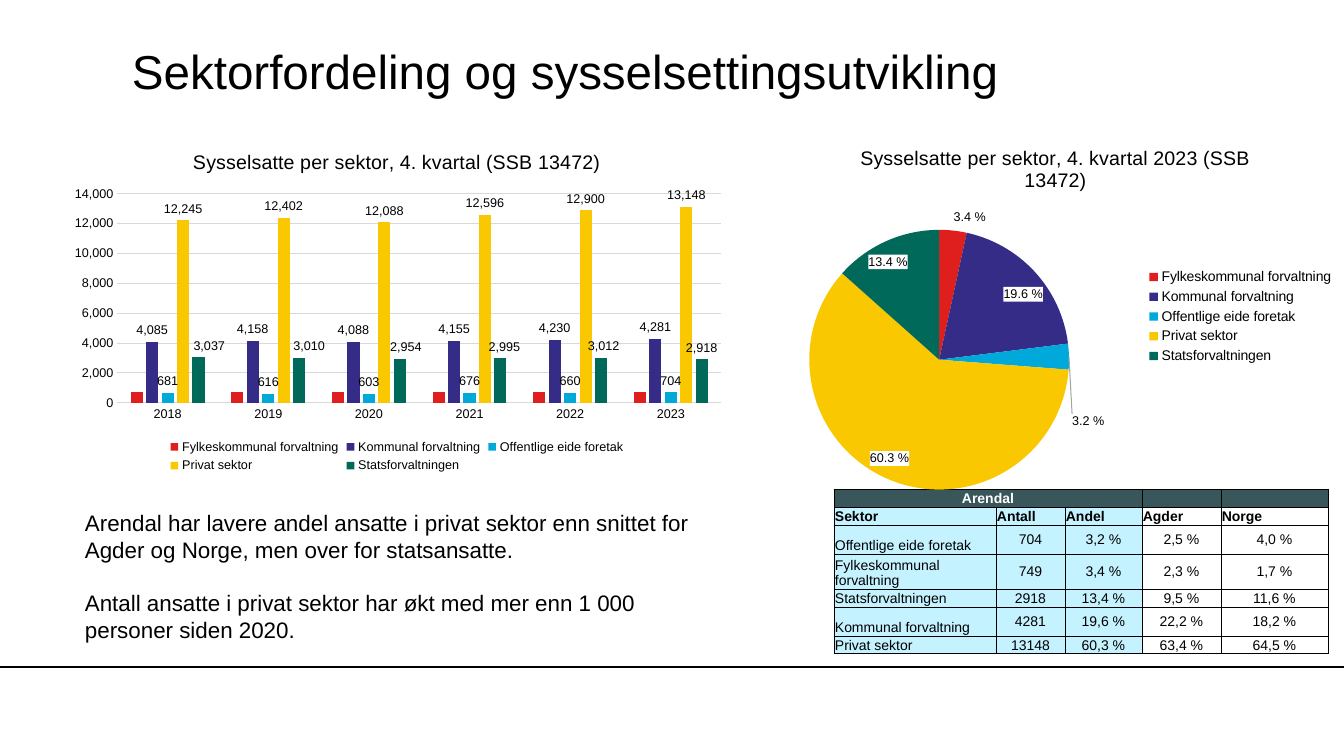
from pptx import Presentation
from pptx.chart.data import CategoryChartData
from pptx.dml.color import RGBColor
from pptx.enum.chart import XL_CHART_TYPE, XL_LEGEND_POSITION, XL_TICK_MARK
from pptx.enum.shapes import MSO_CONNECTOR
from pptx.enum.text import MSO_ANCHOR, PP_ALIGN
from pptx.oxml import parse_xml
from pptx.oxml.ns import nsdecls
from pptx.util import Pt

COLUMN, PIE = XL_CHART_TYPE.COLUMN_CLUSTERED, XL_CHART_TYPE.PIE
LEGEND_BOTTOM, LEGEND_RIGHT = XL_LEGEND_POSITION.BOTTOM, XL_LEGEND_POSITION.RIGHT
NO_TICK = XL_TICK_MARK.NONE
STRAIGHT = MSO_CONNECTOR.STRAIGHT
TOP, MIDDLE, BOTTOM = MSO_ANCHOR.TOP, MSO_ANCHOR.MIDDLE, MSO_ANCHOR.BOTTOM
LEFT, CENTER = PP_ALIGN.LEFT, PP_ALIGN.CENTER

BLACK = RGBColor(0, 0, 0)
WHITE = RGBColor(255, 255, 255)
GRID = RGBColor(0xD9, 0xD9, 0xD9)
LEADER = RGBColor(0xA6, 0xA6, 0xA6)
HEADER = RGBColor(0x39, 0x57, 0x5B)
PALE = RGBColor(0xC5, 0xF2, 0xFF)
RED = RGBColor(0xDF, 0x1F, 0x1D)
PURPLE = RGBColor(0x34, 0x2C, 0x86)
BLUE = RGBColor(0x00, 0xA9, 0xDA)
YELLOW = RGBColor(0xFA, 0xC8, 0x00)
GREEN = RGBColor(0x00, 0x69, 0x5A)
FONT = "Arial"

TITLE = "Sektorfordeling og sysselsettingsutvikling"
COMMENTS = [
    "Arendal har lavere andel ansatte i privat sektor enn snittet for Agder og Norge, "
    "men over for statsansatte.",
    "Antall ansatte i privat sektor har økt med mer enn 1 000 personer siden 2020.",
]
YEARS = ["2018", "2019", "2020", "2021", "2022", "2023"]
# name, colour, share in 2023, employed per year
SECTORS = [
    ("Fylkeskommunal forvaltning", RED, 3.4, [700] * 6),
    ("Kommunal forvaltning", PURPLE, 19.6, [4085, 4158, 4088, 4155, 4230, 4281]),
    ("Offentlige eide foretak", BLUE, 3.2, [681, 616, 603, 676, 660, 704]),
    ("Privat sektor", YELLOW, 60.3, [12245, 12402, 12088, 12596, 12900, 13148]),
    ("Statsforvaltningen", GREEN, 13.4, [3037, 3010, 2954, 2995, 3012, 2918]),
]
TABLE = [
    ["Arendal", "", "", "", ""],
    ["Sektor", "Antall", "Andel", "Agder", "Norge"],
    ["Offentlige eide foretak", "704", "3,2 %", "2,5 %", "4,0 %"],
    ["Fylkeskommunal forvaltning", "749", "3,4 %", "2,3 %", "1,7 %"],
    ["Statsforvaltningen", "2918", "13,4 %", "9,5 %", "11,6 %"],
    ["Kommunal forvaltning", "4281", "19,6 %", "22,2 %", "18,2 %"],
    ["Privat sektor", "13148", "60,3 %", "63,4 %", "64,5 %"],
]
COLUMN_WIDTHS = [162, 69, 77, 79, 107]
ROW_HEIGHTS = [18, 18, 29, 35, 18, 29, 18]
ARENDAL_COLUMNS = 3

COLUMN_CHART = (60, 134, 674, 343)
COLUMN_PLOT = (117, 194, 604, 209)
PIE_CHART = (767, 129, 577, 375)
PIE_PLOT = (809, 230, 260, 260)
# point: x shift, y shift, position, fill
STATE_LABELS = {point: (shift, 0, "outEnd", "") for point, shift in enumerate([11, 10, 6, 4, 3])}
PIE_LABELS = {
    0: (0, 0, "outEnd", ""),
    1: (12, 11, "inEnd", WHITE),
    2: (-3, 65, "outEnd", ""),
    3: (-21, -8, "inEnd", WHITE),
    4: (-20, 8, "inEnd", WHITE),
}


def px(length):
    return round(length * 914400 / 100.8)


def px_all(*lengths):
    return [px(length) for length in lengths]


def style_font(font, size, color=BLACK, bold=False):
    for name, value in {"name": FONT, "size": Pt(size), "bold": bold}.items():
        setattr(font, name, value)
    font.color.rgb = color


def add_text(slide, area, texts, size, margins, anchor, gap=0):
    frame = slide.shapes.add_textbox(*px_all(*area)).text_frame
    frame.word_wrap = True
    frame.vertical_anchor = anchor
    for side, margin in zip(("left", "top", "right", "bottom"), margins):
        setattr(frame, "margin_" + side, px(margin))
    for index, text in enumerate(texts):
        para = frame.paragraphs[0] if index == 0 else frame.add_paragraph()
        para.text = text
        if index:
            para.space_before = Pt(gap)
        style_font(para.font, size)


def manual_layout(**parts):
    modes = '<c:xMode val="edge"/><c:yMode val="edge"/>' if "w" in parts else ""
    values = "".join(f'<c:{name} val="{value:.3f}"/>' for name, value in parts.items())
    target = '<c:layoutTarget val="inner"/>' if "w" in parts else ""
    return f"<c:layout {nsdecls('c')}><c:manualLayout>{target}{modes}{values}</c:manualLayout></c:layout>"


def label_settings(number_format, position, fill):
    paint = f'<a:solidFill><a:srgbClr val="{fill}"/></a:solidFill>' if fill else "<a:noFill/>"
    flags = "".join(f'<c:{flag} val="{int(flag == "showVal")}"/>' for flag in (
        "showLegendKey", "showVal", "showCatName", "showSerName", "showPercent", "showBubbleSize"))
    return (f'<c:numFmt formatCode="{number_format}" sourceLinked="0"/><c:spPr>{paint}</c:spPr>'
            '<c:txPr><a:bodyPr/><a:p><a:pPr><a:defRPr sz="900" b="0"><a:solidFill>'
            f'<a:srgbClr val="{BLACK}"/></a:solidFill><a:latin typeface="{FONT}"/></a:defRPr></a:pPr>'
            f'<a:endParaRPr lang="nb-NO"/></a:p></c:txPr><c:dLblPos val="{position}"/>{flags}')


def add_labels(series, number_format, area, points, leader=""):
    """Show values; points maps an index to (x shift, y shift, position, fill)."""
    singles = "".join(
        f'<c:dLbl><c:idx val="{index}"/>{manual_layout(x=x / area[2], y=y / area[3])}'
        f'{label_settings(number_format, position, fill)}</c:dLbl>'
        for index, (x, y, position, fill) in points.items())
    shared = label_settings(number_format, "outEnd", "")
    element = series.data_labels._element
    element.getparent().replace(element, parse_xml(
        f"<c:dLbls {nsdecls('c', 'a')}>{singles}{shared}{leader}</c:dLbls>"))


def add_sector_chart(slide, kind, area, plot_area, title, categories, series, legend, legend_size):
    data = CategoryChartData(number_format="General")
    data.categories = categories
    for name, values in series:
        data.add_series(name, values)
    chart = slide.shapes.add_chart(kind, *px_all(*area), data).chart
    style_font(chart.font, 10)
    chart.has_title = True
    chart.chart_title.include_in_layout = False
    para = chart.chart_title.text_frame.paragraphs[0]
    para.text = title
    style_font(para.runs[0].font, 14)
    chart.has_legend = True
    chart.legend.position = legend
    chart.legend.include_in_layout = False
    style_font(chart.legend.font, legend_size)
    left, top, width, height = area
    x, y, plot_width, plot_height = plot_area
    layout = parse_xml(manual_layout(x=(x - left) / width, y=(y - top) / height,
                                     w=plot_width / width, h=plot_height / height))
    plot_element = chart.plots[0]._element.getparent()
    for old in plot_element.findall(layout.tag):
        plot_element.remove(old)
    plot_element.insert(0, layout)
    return chart


def add_column_chart(slide):
    chart = add_sector_chart(slide, COLUMN, COLUMN_CHART, COLUMN_PLOT,
                             "Sysselsatte per sektor, 4. kvartal (SSB 13472)", YEARS,
                             [(name, values) for name, _, _, values in SECTORS], LEGEND_BOTTOM, 9)
    plot = chart.plots[0]
    plot.gap_width, plot.overlap, plot.vary_by_categories = 219, -27, False
    for series, (_, color, _, _) in zip(plot.series, SECTORS):
        series.format.fill.solid()
        series.format.fill.fore_color.rgb = color
        if color != RED:
            add_labels(series, "#,##0", COLUMN_CHART, STATE_LABELS if color == GREEN else {})
    for axis in (chart.category_axis, chart.value_axis):
        axis.major_tick_mark = axis.minor_tick_mark = NO_TICK
        style_font(axis.tick_labels.font, 9)
    values = chart.value_axis
    values.minimum_scale, values.maximum_scale, values.major_unit = 0, 14000, 2000
    values.tick_labels.number_format = "#,##0"
    values.tick_labels.number_format_is_linked = False
    values.format.line.fill.background()
    for line in (values.major_gridlines.format.line, chart.category_axis.format.line):
        line.color.rgb, line.width = GRID, Pt(0.75)


def add_pie_chart(slide):
    chart = add_sector_chart(slide, PIE, PIE_CHART, PIE_PLOT,
                             "Sysselsatte per sektor, 4. kvartal 2023 (SSB 13472)",
                             [sector[0] for sector in SECTORS],
                             [("Series 1", [sector[2] for sector in SECTORS])], LEGEND_RIGHT, 10)
    series = chart.plots[0].series[0]
    for index, (_, color, _, _) in enumerate(SECTORS):
        fill = series.points[index].format.fill
        fill.solid()
        fill.fore_color.rgb = color
    leader = ('<c:showLeaderLines val="1"/><c:leaderLines><c:spPr><a:ln w="9525"><a:solidFill>'
              f'<a:srgbClr val="{LEADER}"/></a:solidFill></a:ln></c:spPr></c:leaderLines>')
    add_labels(series, "0.0&quot; %&quot;", PIE_CHART, PIE_LABELS, leader)


def add_sector_table(slide):
    table = slide.shapes.add_table(len(ROW_HEIGHTS), len(COLUMN_WIDTHS), *px_all(
        834, 489, sum(COLUMN_WIDTHS), sum(ROW_HEIGHTS))).table
    for column, width in zip(table.columns, COLUMN_WIDTHS):
        column.width = px(width)
    for row, height in zip(table.rows, ROW_HEIGHTS):
        row.height = px(height)
    for row, texts in enumerate(TABLE):
        for column, text in enumerate(texts):
            cell = table.cell(row, column)
            number = row > 1 and column > 0
            formats = {"margin_left": px(1), "margin_right": px(1), "margin_top": px(1),
                       "margin_bottom": 0, "vertical_anchor": MIDDLE if number else BOTTOM}
            for name, value in formats.items():
                setattr(cell, name, value)
            para = cell.text_frame.paragraphs[0]
            para.text = text
            para.alignment = CENTER if number or row == 0 else LEFT
            style_font(para.font, 10, BLACK if row else WHITE, row < 2)
            properties = cell._tc.get_or_add_tcPr()
            for side in ("lnL", "lnR", "lnT", "lnB"):
                properties.append(parse_xml(
                    f'<a:{side} {nsdecls("a")} w="6350"><a:solidFill><a:srgbClr val="{BLACK}"/>'
                    f'</a:solidFill></a:{side}>'))
            if row and column >= ARENDAL_COLUMNS:
                cell.fill.background()
            else:
                cell.fill.solid()
                cell.fill.fore_color.rgb = PALE if row else HEADER
    table.cell(0, 0).merge(table.cell(0, ARENDAL_COLUMNS - 1))


def main():
    deck = Presentation()
    deck.slide_width, deck.slide_height = px_all(1344, 756)
    slide = deck.slides.add_slide(deck.slide_layouts[6])
    rule = slide.shapes.add_connector(STRAIGHT, *px_all(0, 667, 1344, 667))
    rule.line.color.rgb, rule.line.width = BLACK, Pt(0.75)
    rule._element.spPr.append(parse_xml(f"<a:effectLst {nsdecls('a')}/>"))
    add_text(slide, (132, 32, 1119, 76), [TITLE], 34, (0, 0, 0, 0), MIDDLE)
    add_text(slide, (75, 504, 646, 146), COMMENTS, 16, (10, 5, 10, 5), TOP, 19)
    add_sector_table(slide)
    add_pie_chart(slide)
    add_column_chart(slide)
    deck.save("out.pptx")


if __name__ == "__main__":
    main()
